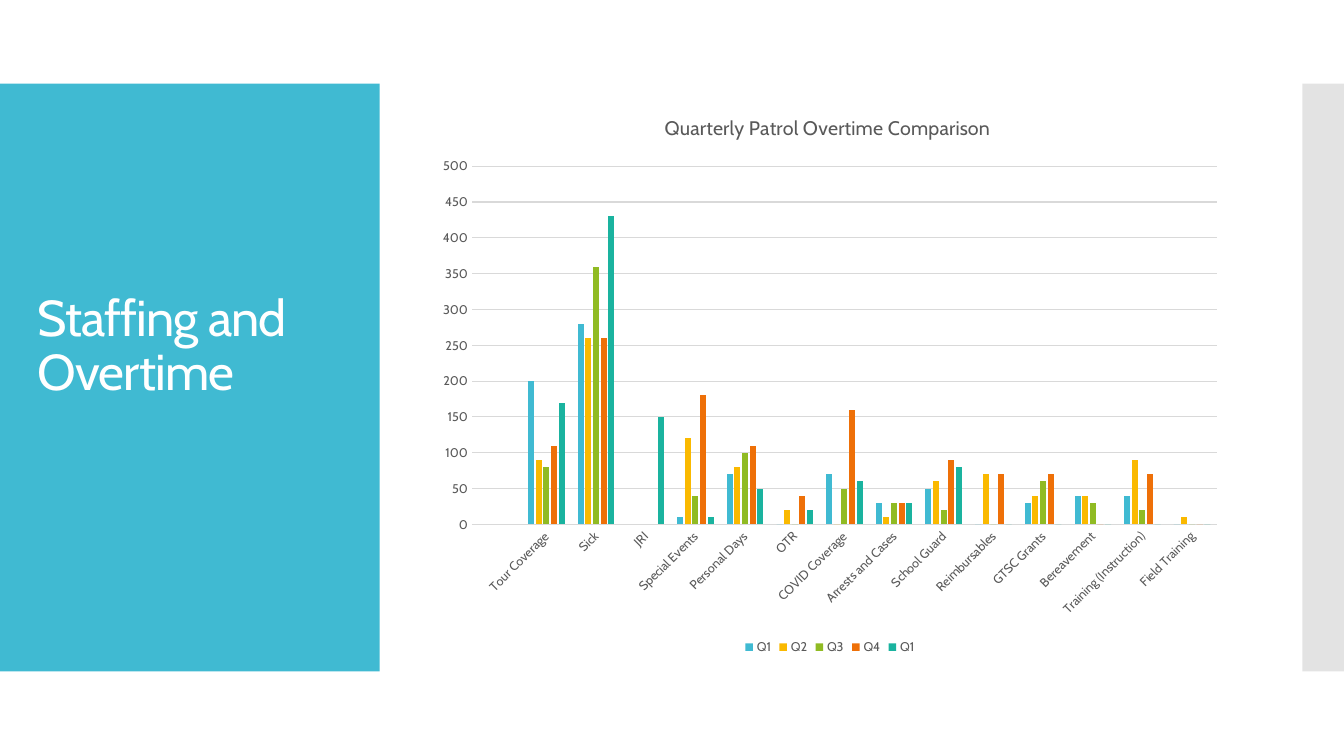
from lxml.etree import SubElement
from pptx import Presentation
from pptx.chart.data import CategoryChartData
from pptx.dml.color import RGBColor
from pptx.enum.chart import XL_CHART_TYPE as Kind, XL_LEGEND_POSITION as Pos
from pptx.enum.chart import XL_TICK_MARK as Tick
from pptx.enum.shapes import MSO_SHAPE as Shape
from pptx.enum.text import MSO_ANCHOR as Anchor
from pptx.oxml.ns import qn
from pptx.util import Inches, Pt

WIDE, HIGH = 13.33, 7.5
FACE = "Cabin"
BLUE, WHITE, GREY, RULE = "40BAD2", "FFFFFF", "595959", "D9D9D9"

CATS = ["", "Tour Coverage", "Sick", "JRI", "Special Events", "Personal Days",
        "OTR", "COVID Coverage", "Arrests and Cases", "School Guard",
        "Reimbursables", "GTSC Grants", "Bereavement",
        "Training (Instruction)", "Field Training"]
SERIES = [
    ("Q1", BLUE, [None, 200, 280, None, 10, 70, 0, 70, 30, 50, 0, 30, 40, 40, 0]),
    ("Q2", "FAB900", [None, 90, 260, None, 120, 80, 20, 0, 10, 60, 70, 40, 40, 90, 10]),
    ("Q3", "90BB23", [None, 80, 360, None, 40, 100, 0, 50, 30, 20, 0, 60, 30, 20, 0]),
    ("Q4", "EE7008", [None, 110, 260, None, 180, 110, 40, 160, 30, 90, 70, 70, 0, 70, 0]),
    ("Q1", "1AB39F", [None, 170, 430, 150, 10, 50, 20, 60, 30, 80, 0, 0, 0, 0, 0]),
]


def color(code):
    return RGBColor.from_string(code)


def place(left, top, width, height):
    """Turn percentages of the slide's size into lengths."""
    return (Inches(left * WIDE / 100), Inches(top * HIGH / 100),
            Inches(width * WIDE / 100), Inches(height * HIGH / 100))


def style(font, size, code):
    font.name, font.size, font.bold = FACE, Pt(size), False
    font.color.rgb = color(code)


def rule(line):
    line.color.rgb = color(RULE)
    line.width = Pt(0.75)


def band(slide, box, code, alpha=100):
    shape = slide.shapes.add_shape(Shape.RECTANGLE, *place(*box))
    shape.shadow.inherit = False
    shape.fill.solid()
    shape.fill.fore_color.rgb = color(code)
    shape.line.fill.background()
    if alpha < 100:
        fill = shape.fill._xPr.find(qn("a:solidFill"))
        SubElement(fill[0], qn("a:alpha")).set("val", str(alpha * 1000))


def title(slide, box, text):
    """Add the heading, lifted above the middle by a deep bottom margin."""
    frame = slide.shapes.add_textbox(*place(*box)).text_frame
    frame.word_wrap = True
    frame.vertical_anchor = Anchor.MIDDLE
    frame.margin_bottom = Inches(0.65)
    para = frame.paragraphs[0]
    para.line_spacing = 0.9
    run = para.add_run()
    run.text = text
    style(run.font, 36, WHITE)
    run._r.get_or_add_rPr().set("spc", "-60")


def axes(chart):
    cat, val = chart.category_axis, chart.value_axis
    for axis in (cat, val):
        axis.major_tick_mark = axis.minor_tick_mark = Tick.NONE
        style(axis.tick_labels.font, 9, GREY)
    rule(cat.format.line)
    # This angle lets the labels turn by themselves.
    body = cat._element.find(qn("c:txPr")).find(qn("a:bodyPr"))
    body.set("rot", "-60000000")
    val.minimum_scale, val.maximum_scale, val.major_unit = 0, 500, 50
    val.format.line.fill.background()
    val.has_major_gridlines = True
    rule(val.major_gridlines.format.line)


def columns(slide, box, head):
    data = CategoryChartData()
    data.categories = CATS
    for name, _, vals in SERIES:
        data.add_series(name, vals)
    chart = slide.shapes.add_chart(
        Kind.COLUMN_CLUSTERED, *place(*box), data).chart
    style(chart.font, 10, "000000")

    chart.has_title = True
    run = chart.chart_title.text_frame.paragraphs[0].add_run()
    run.text = head
    style(run.font, 14, GREY)
    chart.chart_title.include_in_layout = False

    chart.has_legend = True
    chart.legend.position = Pos.BOTTOM
    chart.legend.include_in_layout = False
    style(chart.legend.font, 9, GREY)

    axes(chart)
    plot = chart.plots[0]
    plot.gap_width, plot.overlap = 219, -27
    plot.vary_by_categories = False
    for series, (_, code, _) in zip(plot.series, SERIES):
        series.invert_if_negative = False
        series.format.fill.solid()
        series.format.fill.fore_color.rgb = color(code)


def main():
    deck = Presentation()
    deck.slide_width, deck.slide_height = Inches(WIDE), Inches(HIGH)
    slide = deck.slides.add_slide(deck.slide_layouts[6])
    top, tall = 11.07, 77.73
    band(slide, (0, top, 28.25, tall), BLUE)
    band(slide, (96.9, top, 3.1, tall), "C8C8C8", 50)
    title(slide, (2.05, 16.4, 24.16, 67.07), "Staffing and Overtime")
    columns(slide, (31.75, 12.5, 60, 74.67),
            "Quarterly Patrol Overtime Comparison ")
    deck.save("out.pptx")


if __name__ == "__main__":
    main()
